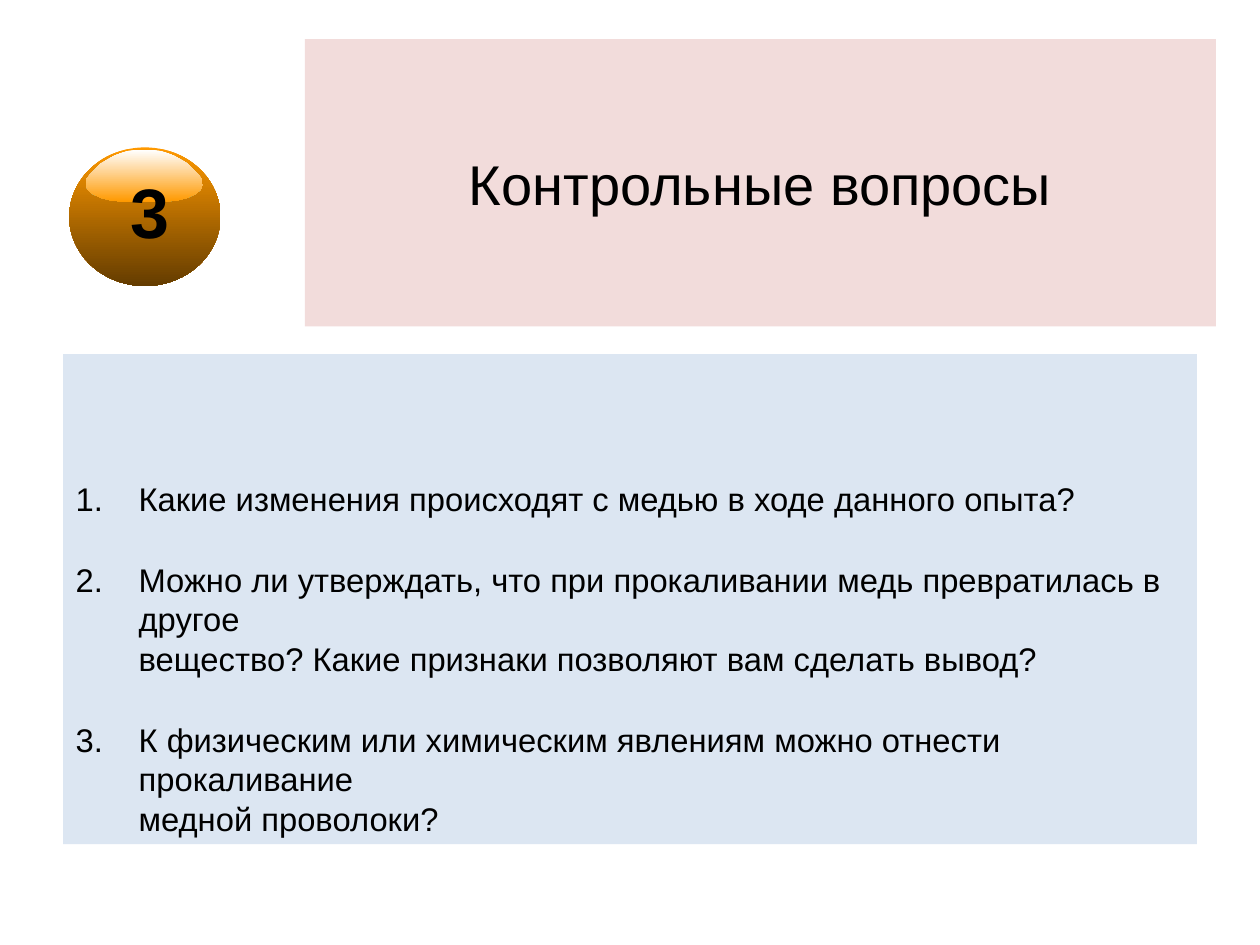
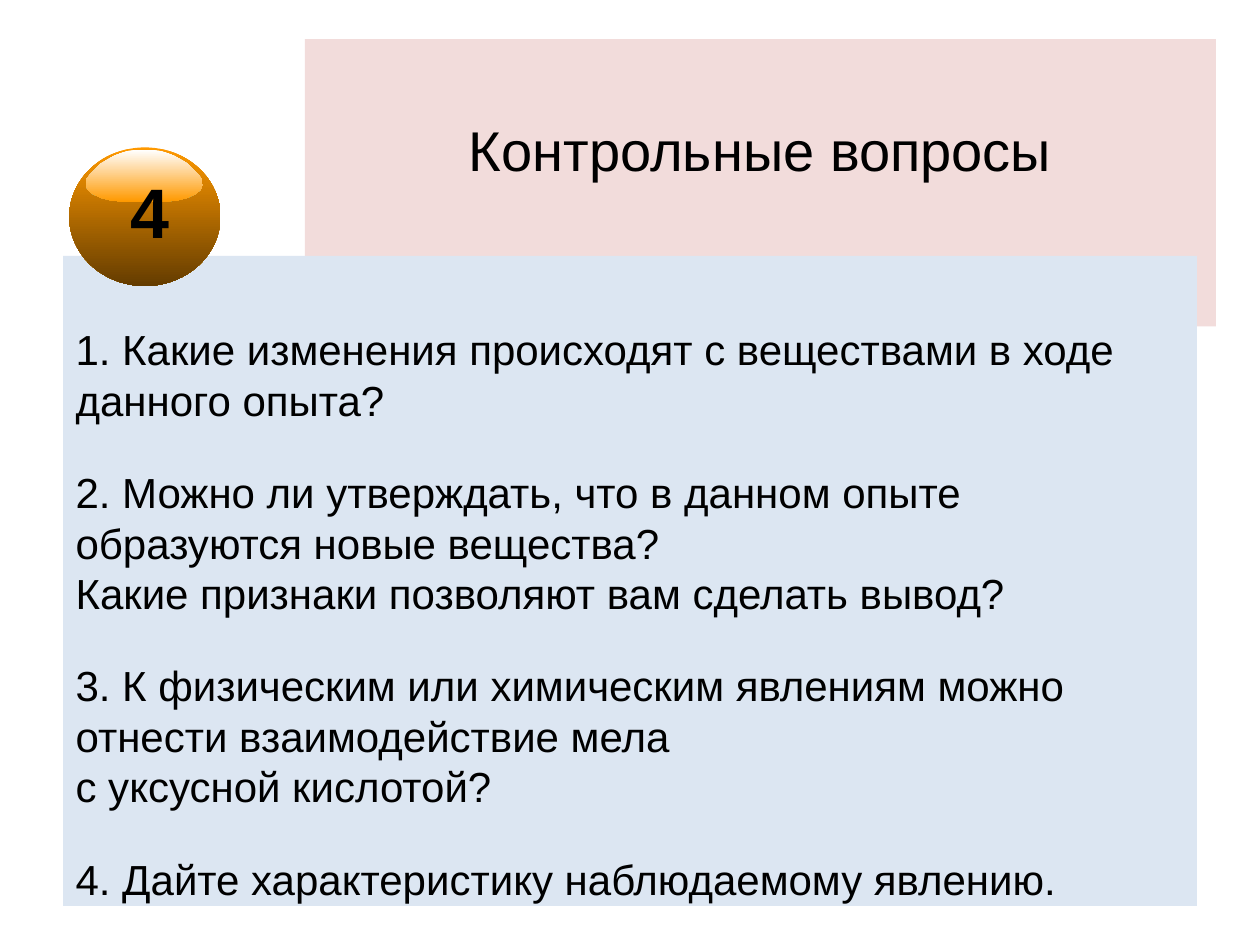
from copy import deepcopy
from dataclasses import dataclass

from lxml.etree import SubElement
from pptx import Presentation
from pptx.dml.color import RGBColor
from pptx.enum.text import MSO_ANCHOR, MSO_AUTO_SIZE, PP_ALIGN
from pptx.enum.shapes import MSO_SHAPE
from pptx.oxml.ns import qn
from pptx.util import Pt


@dataclass(frozen=True)
class Theme:
    font: str = "Arial"
    text: str = "000000"
    title_fill: str = "F2DCDB"
    body_fill: str = "DCE6F2"
    ball: tuple[str, str] = ("FF9900", "643C00")
    highlight: tuple[str, str] = ("FFFFFF", "FF9900")
    title_size: float = 32
    badge_size: float = 40
    line_pitch: float = 1.2
    question_gap: float = 24


@dataclass(frozen=True)
class Box:
    left: float
    top: float
    width: float
    height: float

    def lengths(self) -> tuple:
        return Pt(self.left), Pt(self.top), Pt(self.width), Pt(self.height)


@dataclass(frozen=True)
class QuestionSlide:
    number: str
    questions: tuple[str, ...]
    body: Box
    body_inset: float
    text_size: float
    hanging: float = 0
    title_bottom_inset: float = 3.6


THEME = Theme()
TITLE = "Контрольные вопросы"
TITLE_BOX = Box(174.24, 22.32, 520.56, 164.16)
BALL_BOX = Box(39.6, 84.24, 86.4, 79.2)
BADGE_BOX = Box(67.68, 92.88, 36.72, 55.44)

# Right half of the highlight, as offsets from its vertical axis
HIGHLIGHT_AXIS = 82.4
HIGHLIGHT_HALF = [
    (0, 85.7), (5.4, 85.7), (9.7, 86.4), (14, 87.8), (17.6, 89.3), (21.2, 91.4),
    (24.8, 93.6), (27.7, 96.5), (30.6, 99.4), (32.8, 102.2), (33.5, 105.8),
    (32, 108.7), (29.2, 110.9), (24.8, 113), (19.1, 114.5), (11.9, 115.2), (6.8, 115.2),
]

SLIDES = [
    QuestionSlide(
        number="3",
        questions=(
            "Какие изменения происходят с медью в ходе данного опыта?",
            "Можно ли утверждать, что при прокаливании медь превратилась в другое\n"
            "вещество? Какие признаки позволяют вам сделать вывод?",
            "К физическим или химическим явлениям можно отнести прокаливание\n"
            "медной проволоки?",
        ),
        body=Box(36, 202.32, 648, 280.08),
        body_inset=71.2,
        text_size=18.7,
        hanging=36,
    ),
    QuestionSlide(
        number="4",
        questions=(
            " Какие изменения происходят с веществами в ходе данного опыта?",
            " Можно ли утверждать, что в данном опыте образуются новые вещества?\n"
            "Какие признаки позволяют вам сделать вывод?",
            " К физическим или химическим явлениям можно отнести взаимодействие мела\n"
            "с уксусной кислотой?",
            " Дайте характеристику наблюдаемому явлению.",
        ),
        body=Box(36, 146.16, 648, 371.52),
        body_inset=38.9,
        text_size=24,
        title_bottom_inset=42,
    ),
]


def write_text(paragraph, text: str, *, size: float, bold: bool = False,
               align=PP_ALIGN.LEFT, space_before: float = 0,
               line_height: float | None = None) -> None:
    paragraph.text = text
    paragraph.alignment = align
    paragraph.space_before = Pt(space_before)
    if line_height:
        paragraph.line_spacing = Pt(line_height)
    for run in paragraph.runs:
        run.font.name = THEME.font
        run.font.size = Pt(size)
        run.font.bold = bold
        run.font.color.rgb = RGBColor.from_string(THEME.text)
    # Line breaks take the format of the text around them
    for line_break in paragraph._p.findall(qn("a:br")):
        line_break.append(deepcopy(paragraph.runs[0].font._rPr))


def number_paragraph(paragraph, hanging: float) -> None:
    properties = paragraph._p.get_or_add_pPr()
    properties.set("marL", str(Pt(hanging)))
    properties.set("indent", str(-Pt(hanging)))
    SubElement(properties, qn("a:buAutoNum"), type="arabicPeriod")


def place_panel(shape, box: Box, color: str, anchor):
    shape.left, shape.top, shape.width, shape.height = box.lengths()
    shape.fill.solid()
    shape.fill.fore_color.rgb = RGBColor.from_string(color)
    frame = shape.text_frame
    frame.auto_size = MSO_AUTO_SIZE.NONE
    frame.vertical_anchor = anchor
    return frame


def fill_downward(shape, colors: tuple[str, str]) -> None:
    shape.shadow.inherit = False
    shape.line.fill.background()
    shape.fill.gradient()
    shape.fill.gradient_angle = 270
    for stop, color in zip(shape.fill.gradient_stops, colors):
        stop.color.rgb = RGBColor.from_string(color)


def add_badge(slide, number: str) -> None:
    shapes = slide.shapes.add_group_shape().shapes
    # Ball
    fill_downward(shapes.add_shape(MSO_SHAPE.OVAL, *BALL_BOX.lengths()), THEME.ball)
    # Highlight, mirrored about its axis
    right = [(Pt(HIGHLIGHT_AXIS + x), Pt(y)) for x, y in HIGHLIGHT_HALF]
    left = [(Pt(HIGHLIGHT_AXIS - x), Pt(y)) for x, y in reversed(HIGHLIGHT_HALF[1:])]
    builder = shapes.build_freeform(*right[0])
    builder.add_line_segments(right[1:] + left, close=True)
    fill_downward(builder.convert_to_shape(), THEME.highlight)
    # Number
    frame = shapes.add_textbox(*BADGE_BOX.lengths()).text_frame
    frame.word_wrap = False
    write_text(frame.paragraphs[0], number, size=THEME.badge_size, bold=True)


def add_question_slide(presentation, content: QuestionSlide) -> None:
    slide = presentation.slides.add_slide(presentation.slide_layouts[1])
    # Title
    title = place_panel(slide.shapes.title, TITLE_BOX, THEME.title_fill, MSO_ANCHOR.MIDDLE)
    title.margin_bottom = Pt(content.title_bottom_inset)
    write_text(title.paragraphs[0], TITLE, size=THEME.title_size, align=PP_ALIGN.CENTER)
    # Questions
    body = place_panel(slide.placeholders[1], content.body, THEME.body_fill, MSO_ANCHOR.TOP)
    body.margin_top = Pt(content.body_inset)
    for index, question in enumerate(content.questions):
        paragraph = body.add_paragraph() if index else body.paragraphs[0]
        write_text(paragraph, question, size=content.text_size,
                   space_before=THEME.question_gap if index else 0,
                   line_height=content.text_size * THEME.line_pitch)
        number_paragraph(paragraph, content.hanging)
    add_badge(slide, content.number)


def main() -> None:
    presentation = Presentation()
    presentation.slide_width, presentation.slide_height = Pt(720), Pt(540)
    for content in SLIDES:
        add_question_slide(presentation, content)
    presentation.save("out.pptx")


if __name__ == "__main__":
    main()
